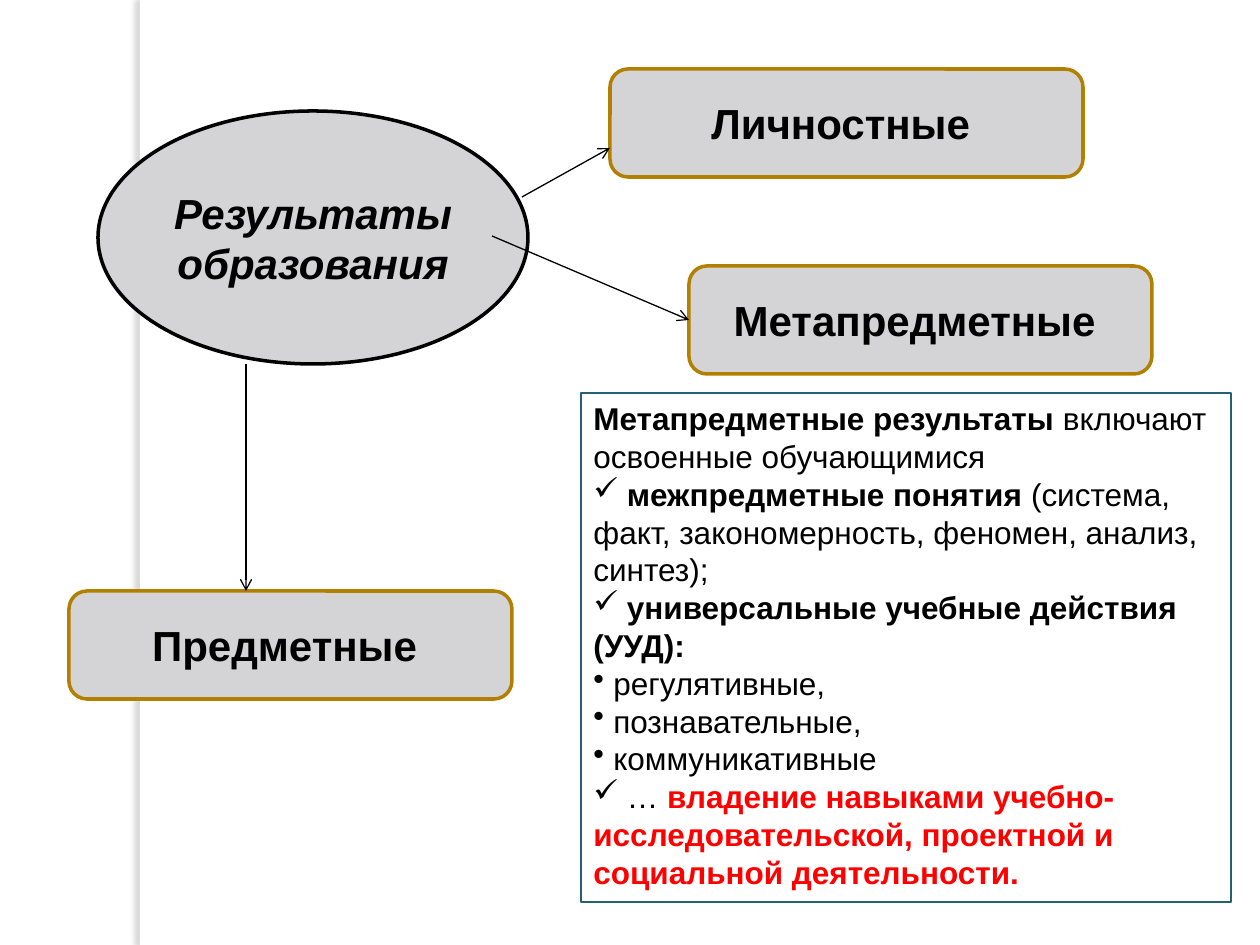
from lxml import etree
from pptx import Presentation
from pptx.dml.color import RGBColor
from pptx.enum.shapes import MSO_CONNECTOR, MSO_SHAPE
from pptx.enum.text import MSO_ANCHOR, PP_ALIGN
from pptx.oxml.ns import qn
from pptx.util import Pt

PX = 914400 / 126
RECT, OVAL, ROUND = MSO_SHAPE.RECTANGLE, MSO_SHAPE.OVAL, MSO_SHAPE.ROUNDED_RECTANGLE
STRAIGHT = MSO_CONNECTOR.STRAIGHT
MIDDLE, CENTER = MSO_ANCHOR.MIDDLE, PP_ALIGN.CENTER
COLORS = {"white": "FFFFFF", "black": "000000", "gray": "D4D4D6", "gold": "B28000",
          "teal": "246172", "red": "FF0000", "shadow": "69696A"}


def rgb(name):
    return RGBColor.from_string(COLORS[name])


def emu(*lengths):
    return [round(v * PX) for v in lengths]


prs = Presentation()
prs.slide_width, prs.slide_height = emu(1260, 945)
s = prs.slides.add_slide(prs.slide_layouts[6])

strip = s.shapes.add_shape(RECT, *emu(140, 0, 10, 945))
strip.fill.solid()
strip.fill.fore_color.rgb = rgb("white")
strip.line.fill.background()
effects = etree.SubElement(strip._element.spPr, qn("a:effectLst"))
shadow = etree.SubElement(effects, qn("a:outerShdw"), blurRad=str(Pt(3)), dist=str(Pt(3)),
                          dir="10800000", algn="tl", rotWithShape="0")
color = etree.SubElement(shadow, qn("a:srgbClr"), val=COLORS["shadow"])
etree.SubElement(color, qn("a:alpha"), val="25000")

nodes = [
    (OVAL, (98, 111, 430, 253), "black", "Результаты образования"),
    (ROUND, (69, 591, 443, 108), "gold", "Предметные "),
    (ROUND, (689, 266, 463, 108), "gold", "Метапредметные "),
    (ROUND, (610, 69, 473, 108), "gold", "Личностные "),
]
for kind, box, outline, text in nodes:
    sp = s.shapes.add_shape(kind, *emu(*box))
    sp.shadow.inherit = False
    sp.fill.solid()
    sp.fill.fore_color.rgb = rgb("gray")
    sp.line.color.rgb = rgb(outline)
    sp.line.width = Pt(2)
    tf = sp.text_frame
    tf.word_wrap = True
    tf.vertical_anchor = MIDDLE
    p = tf.paragraphs[0]
    p.text = text
    p.alignment = CENTER
    p.font.name = "Arial"
    p.font.size = Pt(24)
    p.font.bold = True
    p.font.italic = kind == OVAL
    p.font.color.rgb = rgb("black")

details = [
    (None, [("Метапредметные результаты ", True, "black"),
            ("включают освоенные обучающимися", False, "black")]),
    ("✓", [(" межпредметные понятия ", True, "black"),
           ("(система, факт, закономерность, феномен, анализ, синтез);", False, "black")]),
    ("✓", [(" универсальные учебные действия (УУД):", True, "black")]),
    ("•", [(" регулятивные,", False, "black")]),
    ("•", [(" познавательные,", False, "black")]),
    ("•", [(" коммуникативные", False, "black")]),
    ("✓", [(" … ", False, "black"),
           ("владение навыками учебно-исследовательской, проектной и социальной деятельности.",
            True, "red")]),
]
sp = s.shapes.add_textbox(*emu(581, 393, 650, 509))
sp.line.color.rgb = rgb("teal")
sp.line.width = Pt(0.75)
tf = sp.text_frame
tf.word_wrap = True
for i, (bullet, runs) in enumerate(details):
    p = tf.paragraphs[0] if i == 0 else tf.add_paragraph()
    if bullet:
        etree.SubElement(p._p.get_or_add_pPr(), qn("a:buChar"), char=bullet)
    p.font.name = "Arial"
    p.font.size = Pt(18)
    for text, bold, tint in runs:
        r = p.add_run()
        r.text = text
        r.font.bold = bold
        r.font.color.rgb = rgb(tint)

arrows = [(522, 197, 610, 148), (492, 236, 689, 320), (246, 364, 246, 591)]
for ends in arrows:
    arrow = s.shapes.add_connector(STRAIGHT, *emu(*ends))
    arrow.line.color.rgb = rgb("black")
    arrow.line.width = Pt(0.75)
    etree.SubElement(arrow.line._get_or_add_ln(), qn("a:tailEnd"), type="arrow")
    etree.SubElement(arrow._element.spPr, qn("a:effectLst"))

prs.save("out.pptx")
